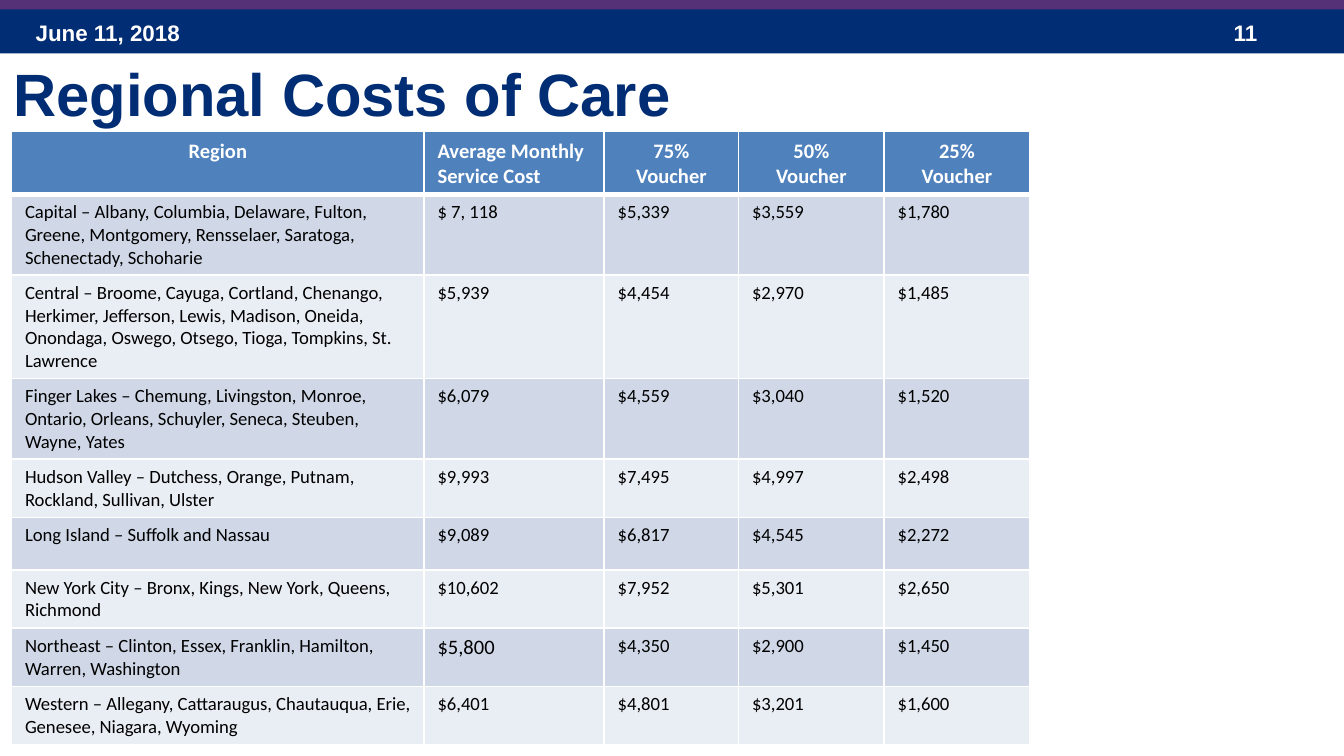
"""Build the slide on regional costs of care."""
from dataclasses import dataclass

import lxml.etree
import pptx
import pptx.dml.color
import pptx.enum.shapes
import pptx.enum.text
import pptx.oxml.ns
import pptx.util

Pt = pptx.util.Pt
Align = pptx.enum.text.PP_ALIGN
Anchor = pptx.enum.text.MSO_ANCHOR


@dataclass(frozen=True)
class Theme:
    navy: str = "002D73"
    plum: str = "553278"
    blue: str = "4F81BD"
    bands: tuple[str, str] = ("D0D8E8", "E9EDF4")
    white: str = "FFFFFF"
    black: str = "000000"
    head: str = "Arial"
    body: str = "Calibri"
    title: float = 32
    strip: float = 12
    label: float = 11
    cell: float = 10


@dataclass(frozen=True)
class Box:
    left: float
    top: float
    width: float
    height: float

    def place(self) -> list[int]:
        return [Pt(v) for v in (self.left, self.top, self.width, self.height)]


@dataclass(frozen=True)
class Bar:
    box: Box
    color: str


@dataclass(frozen=True)
class Note:
    box: Box
    text: str


@dataclass(frozen=True)
class Region:
    name: str
    costs: tuple[str, str, str, str]
    height: float
    size: float = Theme.cell


@dataclass(frozen=True)
class Column:
    text: str
    width: float
    align: Align = Align.CENTER


THEME = Theme()
BARS = [
    Bar(Box(0, 4.8, 720, 23.8), THEME.navy),
    Bar(Box(0, -1.4, 720, 6.4), THEME.plum),
]
NOTES = [
    Note(Box(12, 6.8, 168, 21.6), "June 11, 2018"),
    Note(Box(653.8, 6.8, 54, 21.6), "11"),
]
COLUMNS = [
    Column("Region", 221),
    Column("Average Monthly Service Cost", 96.5, Align.LEFT),
    Column("75% Voucher", 72),
    Column("50%\nVoucher", 78),
    Column("25%\nVoucher", 78),
]
REGIONS = [
    Region("Capital – Albany, Columbia, Delaware, Fulton, Greene, Montgomery, "
           "Rensselaer, Saratoga, Schenectady, Schoharie",
           ("$ 7, 118", "$5,339", "$3,559", "$1,780"), 42),
    Region("Central – Broome, Cayuga, Cortland, Chenango, Herkimer, Jefferson, Lewis, "
           "Madison, Oneida, Onondaga, Oswego, Otsego, Tioga, Tompkins, St. Lawrence",
           ("$5,939", "$4,454", "$2,970", "$1,485"), 47.5),
    Region("Finger Lakes – Chemung, Livingston, Monroe, Ontario, Orleans, Schuyler, "
           "Seneca, Steuben, Wayne, Yates",
           ("$6,079", "$4,559", "$3,040", "$1,520"), 42),
    Region("Hudson Valley – Dutchess, Orange, Putnam, Rockland, Sullivan, Ulster",
           ("$9,993", "$7,495", "$4,997", "$2,498"), 30.2),
    Region("Long Island – Suffolk and Nassau",
           ("$9,089", "$6,817", "$4,545", "$2,272"), 28),
    Region("New York City – Bronx, Kings, New York, Queens, Richmond",
           ("$10,602", "$7,952", "$5,301", "$2,650"), 30.2),
    Region("Northeast – Clinton, Essex, Franklin, Hamilton, Warren, Washington",
           ("$5,800", "$4,350", "$2,900", "$1,450"), 30.2, THEME.label),
    Region("Western – Allegany, Cattaraugus, Chautauqua, Erie, Genesee, Niagara, Wyoming",
           ("$6,401", "$4,801", "$3,201", "$1,600"), 30.2),
]
TOP_ROW = 32.4


def tint(fill, color: str) -> None:
    fill.solid()
    fill.fore_color.rgb = pptx.dml.color.RGBColor.from_string(color)


def write(frame, text: str, *, font: str, size: float, color: str,
          bold: bool = False, align: Align = Align.LEFT) -> None:
    frame.text = text
    frame.word_wrap = True
    for para in frame.paragraphs:
        para.alignment = align
        for run in para.runs:
            run.font.name = font
            run.font.size = Pt(size)
            run.font.bold = bold
            run.font.color.rgb = pptx.dml.color.RGBColor.from_string(color)


def draw_bar(slide, bar: Bar) -> None:
    kind = pptx.enum.shapes.MSO_SHAPE.RECTANGLE
    shape = slide.shapes.add_shape(kind, *bar.box.place())
    shape.shadow.inherit = False
    tint(shape.fill, bar.color)
    shape.line.fill.background()


def draw_note(slide, note: Note) -> None:
    frame = slide.shapes.add_textbox(*note.box.place()).text_frame
    write(frame, note.text, font=THEME.head, size=THEME.strip,
          color=THEME.white, bold=True)
    frame.vertical_anchor = Anchor.MIDDLE


def draw_title(slide, text: str, box: Box) -> None:
    title = slide.shapes.title
    title.left, title.top, title.width, title.height = box.place()
    frame = title.text_frame
    write(frame, text, font=THEME.head, size=THEME.title,
          color=THEME.navy, bold=True)
    frame.auto_size = pptx.enum.text.MSO_AUTO_SIZE.NONE
    frame.vertical_anchor = Anchor.TOP
    frame.margin_top = Pt(1.5)


def edge(cell, thick: str = "") -> None:
    props = cell._tc.get_or_add_tcPr()
    qn = pptx.oxml.ns.qn
    for spot, side in enumerate("LRTB"):
        width = Pt(3 if side == thick else 1)
        line = lxml.etree.Element(qn(f"a:ln{side}"), w=str(width))
        fill = lxml.etree.SubElement(line, qn("a:solidFill"))
        lxml.etree.SubElement(fill, qn("a:srgbClr"), val=THEME.white)
        props.insert(spot, line)


def draw_table(slide, left: float, top: float) -> None:
    heights = [TOP_ROW, *(region.height for region in REGIONS)]
    box = Box(left, top, sum(col.width for col in COLUMNS), sum(heights))
    table = slide.shapes.add_table(len(heights), len(COLUMNS), *box.place()).table
    for row, height in zip(table.rows, heights):
        row.height = Pt(height)
    for spot, col in enumerate(COLUMNS):
        table.columns[spot].width = Pt(col.width)
        cell = table.cell(0, spot)
        write(cell.text_frame, col.text, font=THEME.body, size=THEME.label,
              color=THEME.white, bold=True, align=col.align)
        tint(cell.fill, THEME.blue)
        edge(cell, "B")
    for index, region in enumerate(REGIONS):
        for spot, text in enumerate((region.name, *region.costs)):
            cell = table.cell(index + 1, spot)
            size = region.size if spot == 1 else THEME.cell
            write(cell.text_frame, text, font=THEME.body, size=size, color=THEME.black)
            tint(cell.fill, THEME.bands[index % 2])
            edge(cell, "" if index else "T")


def main() -> None:
    deck = pptx.Presentation()
    deck.slide_width, deck.slide_height = Pt(720), Pt(405)
    slide = deck.slides.add_slide(deck.slide_layouts[5])
    for bar in BARS:
        draw_bar(slide, bar)
    for note in NOTES:
        draw_note(slide, note)
    draw_title(slide, "Regional Costs of Care", Box(0, 28.8, 684, 220.3))
    draw_table(slide, 6.2, 70.5)
    deck.save("out.pptx")


if __name__ == "__main__":
    main()
